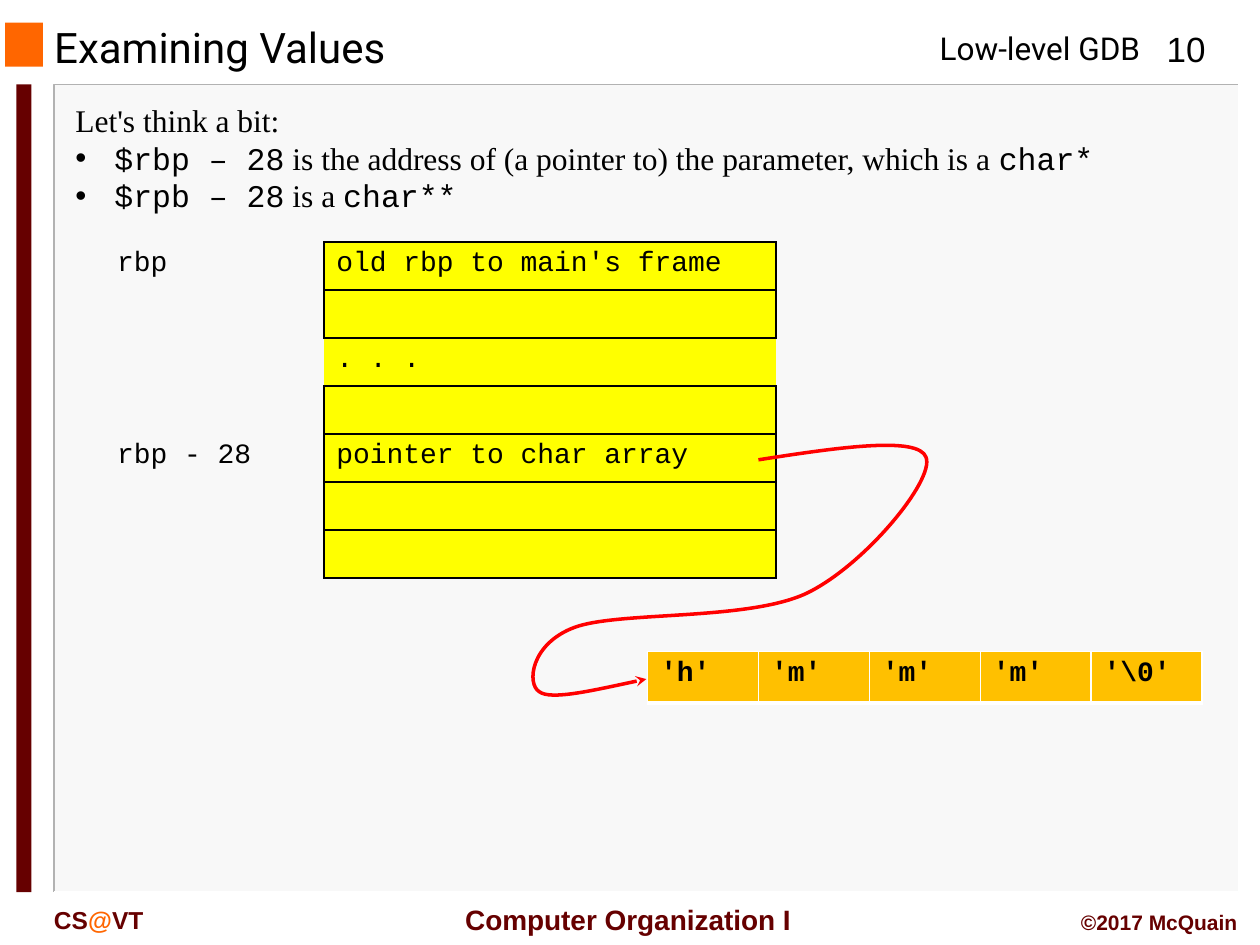
import pptx
import pptx.dml.color
import pptx.enum.shapes
import pptx.enum.text
import pptx.oxml.ns
import pptx.util
from lxml import etree

Inches = pptx.util.Inches
Pt = pptx.util.Pt
RGBColor = pptx.dml.color.RGBColor
Align = pptx.enum.text.PP_ALIGN
Anchor = pptx.enum.text.MSO_ANCHOR
qn = pptx.oxml.ns.qn

BLACK = RGBColor(0x00, 0x00, 0x00)
WHITE = RGBColor(0xFF, 0xFF, 0xFF)
PANEL = RGBColor(0xF8, 0xF8, 0xF8)
GRAY = RGBColor(0xB2, 0xB2, 0xB2)
ORANGE = RGBColor(0xFF, 0x66, 0x00)
MAROON = RGBColor(0x66, 0x00, 0x00)
YELLOW = RGBColor(0xFF, 0xFF, 0x00)
AMBER = RGBColor(0xFF, 0xC0, 0x00)
RED = RGBColor(0xFF, 0x00, 0x00)

ROBOTO = {"name": "Roboto", "size": Pt(18)}
ARIAL = {"name": "Arial", "size": Pt(20)}
FOOTER = {"name": "Arial", "bold": True, "color": MAROON}
SERIF = {"name": "Times New Roman", "size": Pt(18)}
CODE = {"name": "Courier New", "size": Pt(18)}
CELL = {"name": "Courier New", "size": Pt(16)}

BULLET_INDENT = Inches(0.31)
NO_BORDERS = {"L": None, "R": None, "T": None, "B": None}
BLACK_BORDERS = dict.fromkeys("LRTB", (BLACK, 1))
ELLIPSIS_BORDERS = NO_BORDERS | {"T": (BLACK, 1), "B": (BLACK, 1)}
WHITE_BORDERS = dict.fromkeys("LRT", (WHITE, 1)) | {"B": (WHITE, 3)}


class SlideBuilder:
    def __init__(self, page):
        self.page = page
        self.shapes = page.shapes

    def span(self, para, text, style):
        font = para.add_run().font
        para.runs[-1].text = text
        for key, value in ({"color": BLACK} | style).items():
            if key == "color":
                font.color.rgb = value
            else:
                setattr(font, key, value)

    def title(self, text, place, style):
        box = self.shapes.title
        for key, value in zip(("left", "top", "width", "height"), place):
            setattr(box, key, Inches(value))
        frame = box.text_frame
        frame.auto_size = pptx.enum.text.MSO_AUTO_SIZE.NONE
        frame.vertical_anchor = Anchor.MIDDLE
        frame.paragraphs[0].alignment = Align.LEFT
        self.span(frame.paragraphs[0], text, style)

    def text(self, place, lines, align=Align.LEFT, anchor=Anchor.TOP, wrap=True):
        """Add a text box; each line is a list of (text, style) pairs."""
        frame = self.shapes.add_textbox(*map(Inches, place)).text_frame
        frame.word_wrap = wrap
        frame.vertical_anchor = anchor
        for index, line in enumerate(lines):
            para = frame.paragraphs[0] if index == 0 else frame.add_paragraph()
            para.alignment = align
            for text, style in line:
                self.span(para, text, style)
        return frame

    def bullet(self, para):
        props = para._p.get_or_add_pPr()
        props.set("marL", str(BULLET_INDENT))
        props.set("indent", str(-BULLET_INDENT))
        etree.SubElement(props, qn("a:buFont"), typeface="Arial")
        etree.SubElement(props, qn("a:buChar"), char="•")

    def block(self, place, color):
        shape = self.shapes.add_shape(
            pptx.enum.shapes.MSO_SHAPE.RECTANGLE, *map(Inches, place))
        shape.shadow.inherit = False
        shape.fill.solid()
        shape.fill.fore_color.rgb = color
        shape.line.fill.background()

    def outline(self, points, color, width):
        points = [(Inches(x), Inches(y)) for x, y in points]
        builder = self.shapes.build_freeform(*points[0])
        builder.add_line_segments(points[1:], close=False)
        shape = builder.convert_to_shape()
        shape.shadow.inherit = False
        shape.fill.background()
        shape.line.color.rgb = color
        shape.line.width = Pt(width)
        return shape

    def curved_arrow(self, points, color, width):
        """Draw cubic curves: a start point, then three points per curve."""
        shape = self.outline(points, color, width)
        steps = list(shape._element.iter(qn("a:lnTo")))
        for first in range(0, len(steps), 3):
            curve = etree.Element(qn("a:cubicBezTo"))
            steps[first].addprevious(curve)
            for step in steps[first:first + 3]:
                curve.append(step[0])
                step.getparent().remove(step)
        etree.SubElement(shape.line._get_or_add_ln(), qn("a:tailEnd"), type="stealth")

    def table(self, place, widths, row_count):
        grid = self.shapes.add_table(row_count, len(widths), *map(Inches, place)).table
        grid.first_row = grid.horz_banding = False
        for column, width in zip(grid.columns, widths):
            column.width = Inches(width)
        return grid

    def cell(self, cell, text, style, fill, borders):
        if text:
            self.span(cell.text_frame.paragraphs[0], text, style)
        else:
            cell.margin_top = cell.margin_bottom = Inches(0.02)
        props = cell._tc.get_or_add_tcPr()
        for side, border in borders.items():
            line = etree.SubElement(props, qn(f"a:ln{side}"))
            if border is None:
                etree.SubElement(line, qn("a:noFill"))
                continue
            color, width = border
            line.set("w", str(Pt(width)))
            solid = etree.SubElement(line, qn("a:solidFill"))
            etree.SubElement(solid, qn("a:srgbClr"), val=str(color))
        if fill is None:
            cell.fill.background()
        else:
            cell.fill.solid()
            cell.fill.fore_color.rgb = fill


def add_frame(slide):
    left, top, right, bottom = 0.43, 0.67, 9.83, 7.08
    slide.block((left, top, right - left, bottom - top), PANEL)
    slide.outline([(right, top), (left, top), (left, bottom)], GRAY, 1)
    slide.outline([(right, top), (right, bottom), (left, bottom)], WHITE, 1)
    slide.block((0.04, 0.18, 0.3, 0.35), ORANGE)
    slide.block((0.13, 0.67, 0.12, 6.41), MAROON)
    slide.text((7.36, 0.18, 1.89, 0.4), [[("Low-level GDB", ROBOTO)]], wrap=False)
    slide.text((9.08, 0.17, 0.67, 0.43), [[("10", ARIAL)]], Align.CENTER)
    medium = FOOTER | {"size": Pt(14)}
    slide.text((0.33, 7.13, 1.5, 0.33),
               [[("CS", medium), ("@", medium | {"color": ORANGE}), ("VT", medium)]])
    slide.text((3.51, 7.11, 2.95, 0.37),
               [[("Computer Organization I", FOOTER | {"size": Pt(16)})]],
               Align.CENTER, Anchor.MIDDLE, wrap=False)
    slide.text((7, 7.17, 2.92, 0.3),
               [[("©2017 McQuain", FOOTER | {"size": Pt(12)})]], Align.RIGHT)


def add_stack(slide):
    rows = [("rbp", "old rbp to main's frame"), ("", ""), ("", ". . ."), ("", ""),
            ("rbp - 28", "pointer to char array"), ("", ""), ("", "")]
    grid = slide.table((0.83, 1.92, 5.33, 2.67), (1.74, 3.59), len(rows))
    for index, (label, content) in enumerate(rows):
        ellipsis = content == ". . ."
        edge = NO_BORDERS if ellipsis else NO_BORDERS | {"R": (BLACK, 1)}
        box = ELLIPSIS_BORDERS if ellipsis else BLACK_BORDERS
        slide.cell(grid.cell(index, 0), label, CELL, None, edge)
        slide.cell(grid.cell(index, 1), content, CELL, YELLOW, box)


def add_characters(slide):
    characters = ["'h'", "'m'", "'m'", "'m'", r"'\0'"]
    grid = slide.table((5.14, 5.17, 4.42, 0.41), [0.88] * len(characters), 1)
    for index, character in enumerate(characters):
        slide.cell(grid.cell(0, index), character, CELL | {"bold": True},
                   AMBER, WHITE_BORDERS)


def main():
    deck = pptx.Presentation()
    deck.slide_width, deck.slide_height = Inches(10), Inches(7.5)
    slide = SlideBuilder(deck.slides.add_slide(deck.slide_layouts[5]))
    add_frame(slide)
    slide.title("Examining Values", (0.33, 0.18, 6.33, 0.38), ROBOTO | {"size": Pt(24)})
    notes = slide.text((0.5, 0.75, 9.25, 1.01), [
        [("Let's think a bit:", SERIF)],
        [("$rbp – 28", CODE),
         (" is the address of (a pointer to) the parameter, which is a ", SERIF),
         ("char*", CODE)],
        [("$rpb – 28", CODE), (" is a ", SERIF), ("char**", CODE)],
    ])
    for para in notes.paragraphs[1:]:
        slide.bullet(para)
    add_stack(slide)
    add_characters(slide)
    slide.curved_arrow([
        (6.02, 3.65),
        (6.66, 3.55), (7.29, 3.46), (7.35, 3.63),
        (7.42, 3.81), (6.86, 4.49), (6.4, 4.71),
        (5.93, 4.93), (4.91, 4.85), (4.56, 4.98),
        (4.21, 5.11), (4.18, 5.43), (4.28, 5.49),
        (4.37, 5.56), (4.75, 5.47), (5.13, 5.39),
    ], RED, 2)
    deck.save("out.pptx")


if __name__ == "__main__":
    main()
